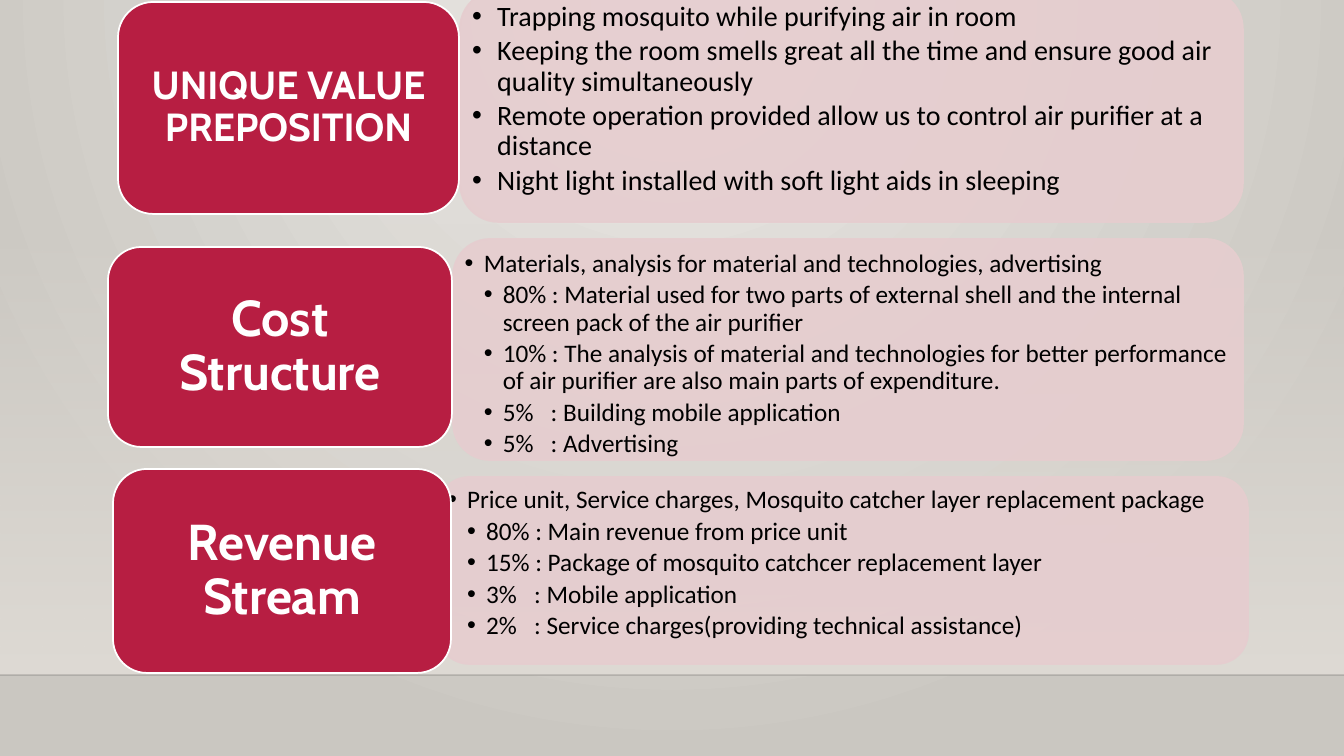
from lxml.etree import SubElement
from pptx import Presentation
from pptx.dml.color import RGBColor
from pptx.enum.shapes import MSO_CONNECTOR, MSO_SHAPE
from pptx.enum.text import MSO_ANCHOR, PP_ALIGN
from pptx.oxml.ns import qn
from pptx.util import Pt

WIDTH, HEIGHT = 1344, 756
FLOOR_TOP, FLOOR_LINE = 223, 675
TAB_STOP = 86

CRIMSON = RGBColor(0xB7, 0x1E, 0x42)
ROSE = RGBColor(0xE6, 0xCD, 0xCF)
WHITE = RGBColor(0xFF, 0xFF, 0xFF)
BLACK = RGBColor(0, 0, 0)
NEAR_BLACK = RGBColor(0, 0, 1)
WALL_LIGHT = RGBColor(0xEC, 0xEA, 0xE7)
WALL_DARK = RGBColor(0xCA, 0xC7, 0xC1)
GLOW = RGBColor(0xDF, 0xDB, 0xD5)

# Boxes are left, top, width, height; each point is level, text.
SECTIONS = [
    {
        "title": "UNIQUE VALUE PREPOSITION", "title_size": 28, "title_insets": (12, 6),
        "label": (118, 2, 341, 212), "panel": (460, -10, 783, 232),
        "size": 20, "indent": 25,
        "points": [
            (1, "Trapping mosquito while purifying air in room"),
            (1, "Keeping the room smells great all the time and ensure good air quality simultaneously"),
            (1, "Remote operation provided allow us to control air purifier at a distance"),
            (1, "Night light installed with soft light aids in sleeping"),
        ],
    },
    {
        "title": "Cost Structure", "title_size": 36, "title_insets": (15, 7),
        "label": (108, 247, 344, 200), "panel": (453, 239, 790, 221),
        "size": 18, "indent": 19,
        "points": [
            (1, "Materials, analysis for material and technologies, advertising"),
            (2, "80% : Material used for two parts of external shell and the internal "
                "screen pack of the air purifier"),
            (2, "10% : The analysis of material and technologies for better performance "
                "of air purifier are also main parts of expenditure."),
            (2, "5%\t: Building mobile application"),
            (2, "5%\t: Advertising"),
        ],
    },
    {
        "title": "Revenue Stream", "title_size": 36, "title_insets": (15, 7),
        "label": (113, 469, 338, 204), "panel": (438, 477, 810, 187),
        "size": 18, "indent": 19,
        "points": [
            (1, "Price unit, Service charges, Mosquito catcher layer replacement package"),
            (2, "80% : Main revenue from price unit"),
            (2, "15% : Package of mosquito catchcer replacement layer"),
            (2, "3%\t: Mobile application"),
            (2, "2%\t: Service charges(providing technical assistance)"),
        ],
    },
]


def px(length):
    return round(length * 914400 / 100.8)


def set_alpha(color_element, percent):
    SubElement(color_element, qn("a:alpha"), val=str(percent * 1000))


def set_gradient(fill, colors):
    fill.gradient()
    for stop, color in zip(fill.gradient_stops, colors):
        stop.color.rgb = color


def add_box(slide, kind, box, fill_color, line_color):
    shape = slide.shapes.add_shape(kind, *map(px, box))
    shape.shadow.inherit = False
    shape.fill.solid()
    shape.fill.fore_color.rgb = fill_color
    shape.line.color.rgb = line_color
    shape.line.width = Pt(1.25)
    return shape


def prepare_text(shape, anchor, inset_x, inset_y):
    frame = shape.text_frame
    frame.word_wrap = True
    frame.vertical_anchor = anchor
    frame.margin_left = frame.margin_right = px(inset_x)
    frame.margin_top = frame.margin_bottom = px(inset_y)
    return frame


def style_font(font, name, size, color, bold=False):
    font.name, font.size, font.bold = name, Pt(size), bold
    font.color.rgb = color


def add_bullet(paragraph, level, indent, tabbed):
    properties = paragraph._p.get_or_add_pPr()
    properties.set("marL", str(px(level * indent)))
    properties.set("indent", str(-px(indent)))
    SubElement(properties, qn("a:buFont"), typeface="Arial")
    SubElement(properties, qn("a:buChar"), char="•")
    if tabbed:
        tabs = SubElement(properties, qn("a:tabLst"))
        SubElement(tabs, qn("a:tab"), pos=str(px(TAB_STOP)), algn="l")


def add_backdrop(slide):
    set_gradient(slide.background.fill, (WALL_LIGHT, WALL_DARK))
    gradient = next(slide.element.iter(qn("a:gradFill")))
    gradient.remove(gradient.find(qn("a:lin")))
    radial = SubElement(gradient, qn("a:path"), path="circle")
    SubElement(radial, qn("a:fillToRect"), l="43000", t="0", r="43000", b="100000")

    glow = slide.shapes.add_shape(
        MSO_SHAPE.RECTANGLE, 0, px(FLOOR_TOP), px(WIDTH), px(FLOOR_LINE - FLOOR_TOP))
    glow.shadow.inherit = False
    glow.line.fill.background()
    set_gradient(glow.fill, (GLOW, GLOW))
    glow.fill.gradient_angle = 270
    set_alpha(next(glow.element.spPr.iter(qn("a:srgbClr"))), 0)

    edge = slide.shapes.add_connector(
        MSO_CONNECTOR.STRAIGHT, 0, px(FLOOR_LINE), px(WIDTH), px(FLOOR_LINE))
    edge.line.color.rgb = NEAR_BLACK
    edge.line.width = Pt(1)
    properties = edge.element.spPr
    set_alpha(next(properties.iter(qn("a:srgbClr"))), 20)
    SubElement(properties, qn("a:effectLst"))


def add_panel(slide, section):
    panel = add_box(
        slide, MSO_SHAPE.FLOWCHART_ALTERNATE_PROCESS, section["panel"], ROSE, ROSE)
    for color in panel.element.spPr.iter(qn("a:srgbClr")):
        set_alpha(color, 90)
    frame = prepare_text(panel, MSO_ANCHOR.TOP, 1, 1)
    for index, (level, text) in enumerate(section["points"]):
        paragraph = frame.add_paragraph() if index else frame.paragraphs[0]
        paragraph.text = text
        paragraph.level = level
        paragraph.alignment = PP_ALIGN.LEFT
        paragraph.line_spacing = 0.9
        paragraph.space_after = Pt(3)
        add_bullet(paragraph, level, section["indent"], "\t" in text)
        style_font(paragraph.font, "Calibri", section["size"], BLACK)


def add_label(slide, section):
    label = add_box(slide, MSO_SHAPE.ROUNDED_RECTANGLE, section["label"], CRIMSON, WHITE)
    frame = prepare_text(label, MSO_ANCHOR.MIDDLE, *section["title_insets"])
    paragraph = frame.paragraphs[0]
    paragraph.text = section["title"]
    paragraph.alignment = PP_ALIGN.CENTER
    paragraph.line_spacing = 0.9
    style_font(paragraph.font, "Cabin", section["title_size"], WHITE, bold=True)


def main():
    presentation = Presentation()
    presentation.slide_width, presentation.slide_height = px(WIDTH), px(HEIGHT)
    slide = presentation.slides.add_slide(presentation.slide_layouts[6])
    add_backdrop(slide)
    for section in SECTIONS:
        add_panel(slide, section)
        add_label(slide, section)
    presentation.save("out.pptx")


if __name__ == "__main__":
    main()
